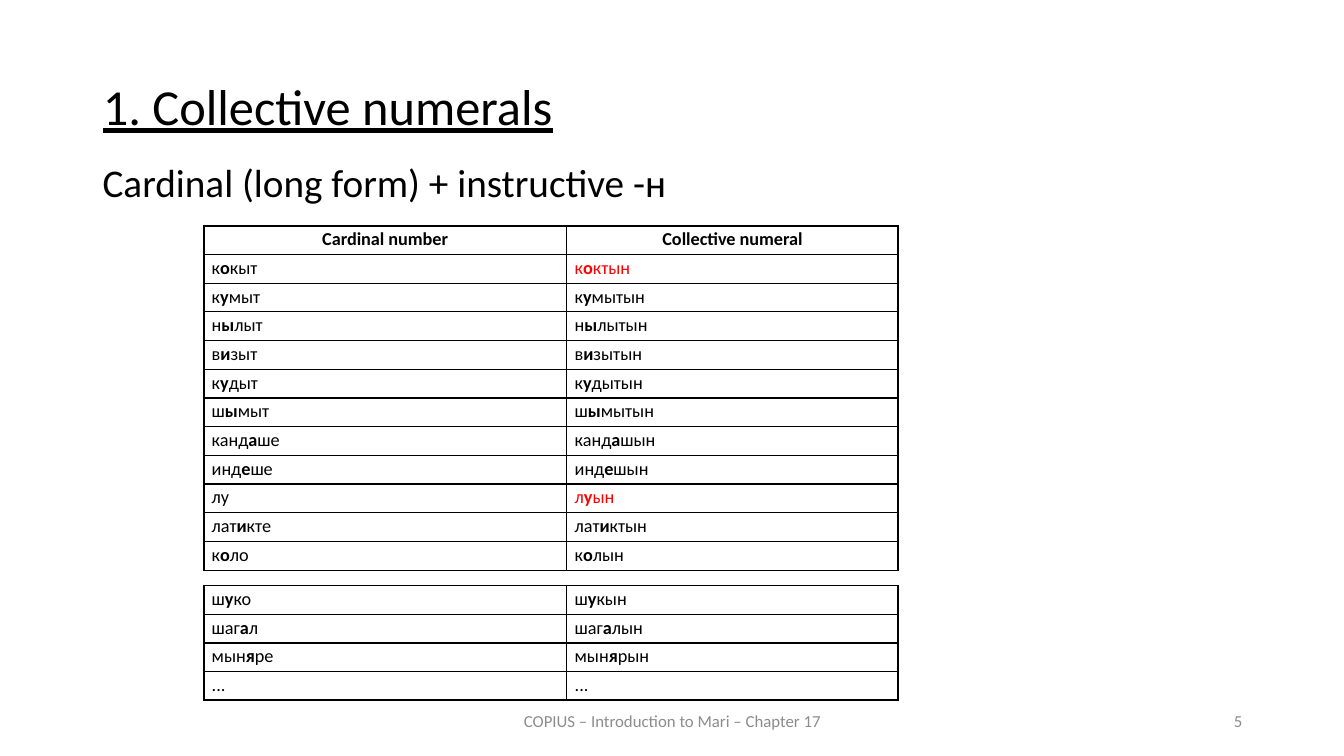
import pptx
import pptx.util
import pptx.dml.color
import pptx.enum.text
import pptx.oxml
import pptx.oxml.ns

Inches = pptx.util.Inches
Pt = pptx.util.Pt
Align = pptx.enum.text.PP_ALIGN
Anchor = pptx.enum.text.MSO_ANCHOR

WIDE, HIGH = 13.33, 7.5
LEFT, SPAN = 0.92, 11.5
COLS = (3.6, 3.29)
ROW = 0.285
THIN, THICK = 1, 1.5
INK = {"text": "000000", "mark": "FF0000", "foot": "8C8C8C"}

HEAD = ("Cardinal number", "Collective numeral")
COUNTS = [
    ("к|о|кыт", "к|о|ктын"),
    ("к|у|мыт", "к|у|мытын"),
    ("н|ы|лыт", "н|ы|лытын"),
    ("в|и|зыт", "в|и|зытын"),
    ("к|у|дыт", "к|у|дытын"),
    ("ш|ы|мыт", "ш|ы|мытын"),
    ("канд|а|ше", "канд|а|шын"),
    ("инд|е|ше", "инд|е|шын"),
    ("лу", "л|у|ын"),
    ("лат|и|кте", "лат|и|ктын"),
    ("к|о|ло", "к|о|лын"),
]
OTHERS = [
    ("ш|у|ко", "ш|у|кын"),
    ("шаг|а|л", "шаг|а|лын"),
    ("мын|я|ре", "мын|я|рын"),
    ("...", "..."),
]
ODD = {"к|о|ктын", "л|у|ын"}


def style(run, size, ink="text", bold=False):
    run.font.name = "Calibri"
    run.font.size = Pt(size)
    run.font.bold = bold
    run.font.color.rgb = pptx.dml.color.RGBColor.from_string(INK[ink])


def place(shape, box):
    shape.left, shape.top, shape.width, shape.height = map(Inches, box)


def write(shape, text, size, ink="text", align=Align.LEFT, anchor=Anchor.TOP):
    frame = shape.text_frame
    frame.text = text
    frame.word_wrap = True
    frame.auto_size = pptx.enum.text.MSO_AUTO_SIZE.NONE
    frame.vertical_anchor = anchor
    line = frame.paragraphs[0]
    line.alignment = align
    style(line.runs[0], size, ink)
    return line


def add_title(slide, box):
    title = slide.shapes.title
    place(title, box)
    line = write(title, "1. Collective numerals", 36, align=Align.JUSTIFY)
    line.line_spacing = 0.9
    line.space_before = Pt(12)
    line.runs[0].font.underline = True


def add_rule(slide, box):
    shape = slide.shapes.add_textbox(*map(Inches, box))
    line = write(shape, "Cardinal (long form) + instructive -н", 28)
    line.line_spacing = 0.9
    line.space_before = Pt(10)


def add_foot(slide, box, text, align):
    shape = slide.shapes.add_textbox(*map(Inches, box))
    write(shape, text, 12, "foot", align, Anchor.MIDDLE)


def set_edges(cell, widths):
    props = cell._tc.get_or_add_tcPr()
    space = pptx.oxml.ns.nsdecls("a")
    for spot, (side, width) in enumerate(zip("LRTB", widths)):
        props.insert(spot, pptx.oxml.parse_xml(
            f'<a:ln{side} {space} w="{Pt(width)}"><a:solidFill>'
            f'<a:srgbClr val="{INK["text"]}"/></a:solidFill></a:ln{side}>'))


def fill_cell(cell, word, head):
    cell.fill.background()
    cell.margin_left = cell.margin_right = Inches(0.08)
    cell.margin_top, cell.margin_bottom = Inches(0.01), 0
    line = cell.text_frame.paragraphs[0]
    line.alignment = Align.CENTER if head else Align.JUSTIFY
    line.line_spacing = 1.07
    ink = "mark" if word in ODD else "text"
    for part, text in enumerate(word.split("|")):
        run = line.add_run()
        run.text = text
        style(run, 13, ink, head or part % 2 == 1)


def add_grid(slide, left, top, rows, head=False, closed=False):
    frame = slide.shapes.add_table(
        len(rows), len(COLS), Inches(left), Inches(top),
        Inches(sum(COLS)), Inches(ROW * len(rows)))
    table = frame.table
    table.first_row = table.horz_banding = False
    for col, width in zip(table.columns, COLS):
        col.width = Inches(width)
    for r, words in enumerate(rows):
        table.rows[r].height = Inches(ROW)
        top_edge = THICK if head and r < 2 else THIN
        last = closed and r == len(rows) - 1
        low_edge = THICK if last or (head and r == 0) else THIN
        for c, word in enumerate(words):
            cell = table.cell(r, c)
            fill_cell(cell, word, head and r == 0)
            sides = (THICK, THIN) if c == 0 else (THIN, THICK)
            set_edges(cell, (*sides, top_edge, low_edge))


def main():
    deck = pptx.Presentation()
    deck.slide_width, deck.slide_height = Inches(WIDE), Inches(HIGH)
    slide = deck.slides.add_slide(deck.slide_layouts[5])
    add_title(slide, (LEFT, 0.76, SPAN, 0.83))
    add_foot(slide, (4.42, 6.95, 4.5, 0.4),
             "COPIUS – Introduction to Mari – Chapter 17", Align.CENTER)
    add_foot(slide, (9.42, 6.95, 3, 0.4), "5", Align.RIGHT)
    add_grid(slide, 2.02, 2.24, [HEAD] + COUNTS, head=True)
    add_grid(slide, 2.02, 5.81, OTHERS, closed=True)
    add_rule(slide, (LEFT, 1.57, SPAN, 4.76))
    deck.save("out.pptx")


if __name__ == "__main__":
    main()
